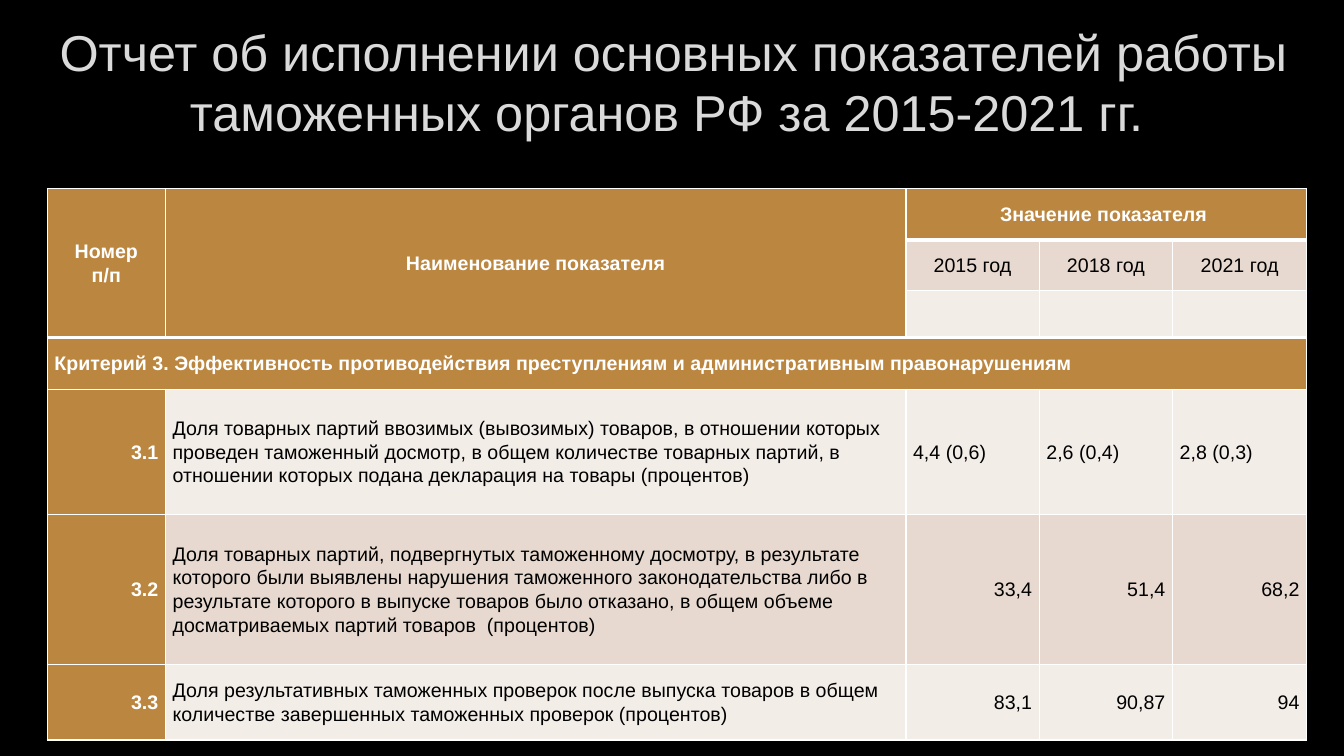
import pptx
import pptx.util
import pptx.dml.color
import pptx.enum.text
import pptx.oxml
import pptx.oxml.ns

Cm = pptx.util.Cm
Pt = pptx.util.Pt
ALIGN = pptx.enum.text.PP_ALIGN
MIDDLE = pptx.enum.text.MSO_ANCHOR.MIDDLE

BLACK, WHITE, SILVER = "000000", "FFFFFF", "DADADA"
OCHRE, SAND, CREAM = "BB8640", "E7D9CF", "F3EDE8"

COLUMN_WIDTHS = [2.98, 18.66, 3.36, 3.36, 3.38]
ROW_HEIGHTS = [1.3, 1.27, 1.17, 1.3, 3.15, 3.78, 1.91]
YEARS = ["2015 год", "2018 год", "2021 год"]
CRITERION = "Критерий 3. Эффективность противодействия преступлениям и административным правонарушениям"
INDICATORS = [
    ("3.1", "Доля товарных партий ввозимых (вывозимых) товаров, в отношении которых проведен "
     "таможенный досмотр, в общем количестве товарных партий, в отношении которых подана "
     "декларация на товары (процентов) ",
     ["4,4 (0,6)", "2,6 (0,4)", "2,8 (0,3)"], ALIGN.LEFT, CREAM),
    ("3.2", "Доля товарных партий, подвергнутых таможенному досмотру, в результате которого были "
     "выявлены нарушения таможенного законодательства либо в результате которого в выпуске "
     "товаров было отказано, в общем объеме досматриваемых партий товаров  (процентов)",
     ["33,4", "51,4", "68,2"], ALIGN.RIGHT, SAND),
    ("3.3", "Доля результативных таможенных проверок после выпуска товаров в общем количестве "
     "завершенных таможенных проверок (процентов)",
     ["83,1", "90,87", "94"], ALIGN.RIGHT, CREAM),
]


def color(value):
    return pptx.dml.color.RGBColor.from_string(value)


def format_paragraph(paragraph, size, ink, align, bold=False):
    paragraph.alignment = align
    for run in paragraph.runs:
        run.font.name = "Arial"
        run.font.size = Pt(size)
        run.font.bold = bold
        run.font.color.rgb = color(ink)


def draw_borders(cell, bottom):
    properties = cell._tc.get_or_add_tcPr()
    widths = {"lnL": 1, "lnR": 1, "lnT": 1, "lnB": bottom}
    for position, (side, width) in enumerate(widths.items()):
        border = pptx.oxml.parse_xml(
            f'<a:{side} {pptx.oxml.ns.nsdecls("a")} w="{Pt(width)}"><a:solidFill>'
            f'<a:srgbClr val="{WHITE}"/></a:solidFill></a:{side}>')
        properties.insert(position, border)


def fill_cell(cell, text, fill, align=ALIGN.LEFT):
    cell.fill.solid()
    cell.fill.fore_color.rgb = color(fill)
    if not text:
        return
    cell.text_frame.text = text
    cell.vertical_anchor = MIDDLE
    cell.margin_left = cell.margin_right = Cm(0.18)
    cell.margin_top = cell.margin_bottom = 0
    heading = fill == OCHRE
    for paragraph in cell.text_frame.paragraphs:
        format_paragraph(paragraph, 14, WHITE if heading else BLACK, align, heading)
        paragraph.line_spacing = 1.07


def add_title(slide, left, top, width, height):
    title = slide.shapes.title
    title.left, title.top, title.width, title.height = Cm(left), Cm(top), Cm(width), Cm(height)
    frame = title.text_frame
    frame.text = "Отчет об исполнении основных показателей работы таможенных органов РФ за 2015-2021 гг. "
    frame.word_wrap = True
    frame.auto_size = pptx.enum.text.MSO_AUTO_SIZE.NONE
    frame.vertical_anchor = MIDDLE
    format_paragraph(frame.paragraphs[0], 36, SILVER, ALIGN.CENTER)


def add_header_rows(report):
    report.cell(0, 0).merge(report.cell(2, 0))
    report.cell(0, 1).merge(report.cell(2, 1))
    report.cell(0, 2).merge(report.cell(0, 4))
    headings = ["Номер\nп/п", "Наименование показателя", "Значение показателя "]
    for column, heading in enumerate(headings):
        fill_cell(report.cell(0, column), heading, OCHRE, ALIGN.CENTER)
    for column, year in enumerate(YEARS, 2):
        fill_cell(report.cell(1, column), year, SAND, ALIGN.CENTER)
        fill_cell(report.cell(2, column), "", CREAM)


def add_indicator_rows(report):
    report.cell(3, 0).merge(report.cell(3, 4))
    fill_cell(report.cell(3, 0), CRITERION, OCHRE)
    for row, (number, name, values, align, band) in enumerate(INDICATORS, 4):
        fill_cell(report.cell(row, 0), number, OCHRE, ALIGN.RIGHT)
        fill_cell(report.cell(row, 1), name, band)
        for column, value in enumerate(values, 2):
            fill_cell(report.cell(row, column), value, band, align)


def add_report(slide, left, top, width, height):
    report = slide.shapes.add_table(len(ROW_HEIGHTS), len(COLUMN_WIDTHS),
                                    Cm(left), Cm(top), Cm(width), Cm(height)).table
    report.first_row = report.horz_banding = False
    for column, share in zip(report.columns, COLUMN_WIDTHS):
        column.width = Cm(width * share / sum(COLUMN_WIDTHS))
    for row, share in zip(report.rows, ROW_HEIGHTS):
        row.height = Cm(height * share / sum(ROW_HEIGHTS))
    add_header_rows(report)
    add_indicator_rows(report)
    for index, row in enumerate(report.rows):
        for cell in row.cells:
            draw_borders(cell, 3 if index in (0, 2) else 1)


def main():
    presentation = pptx.Presentation()
    presentation.slide_width, presentation.slide_height = Cm(33.87), Cm(19.05)
    slide = presentation.slides.add_slide(presentation.slide_layouts[5])
    slide.background.fill.solid()
    slide.background.fill.fore_color.rgb = color(BLACK)
    add_title(slide, 0.28, 0.71, 33.4, 2.69)
    add_report(slide, 1.19, 4.75, 31.74, 13.88)
    presentation.save("out.pptx")


if __name__ == "__main__":
    main()
